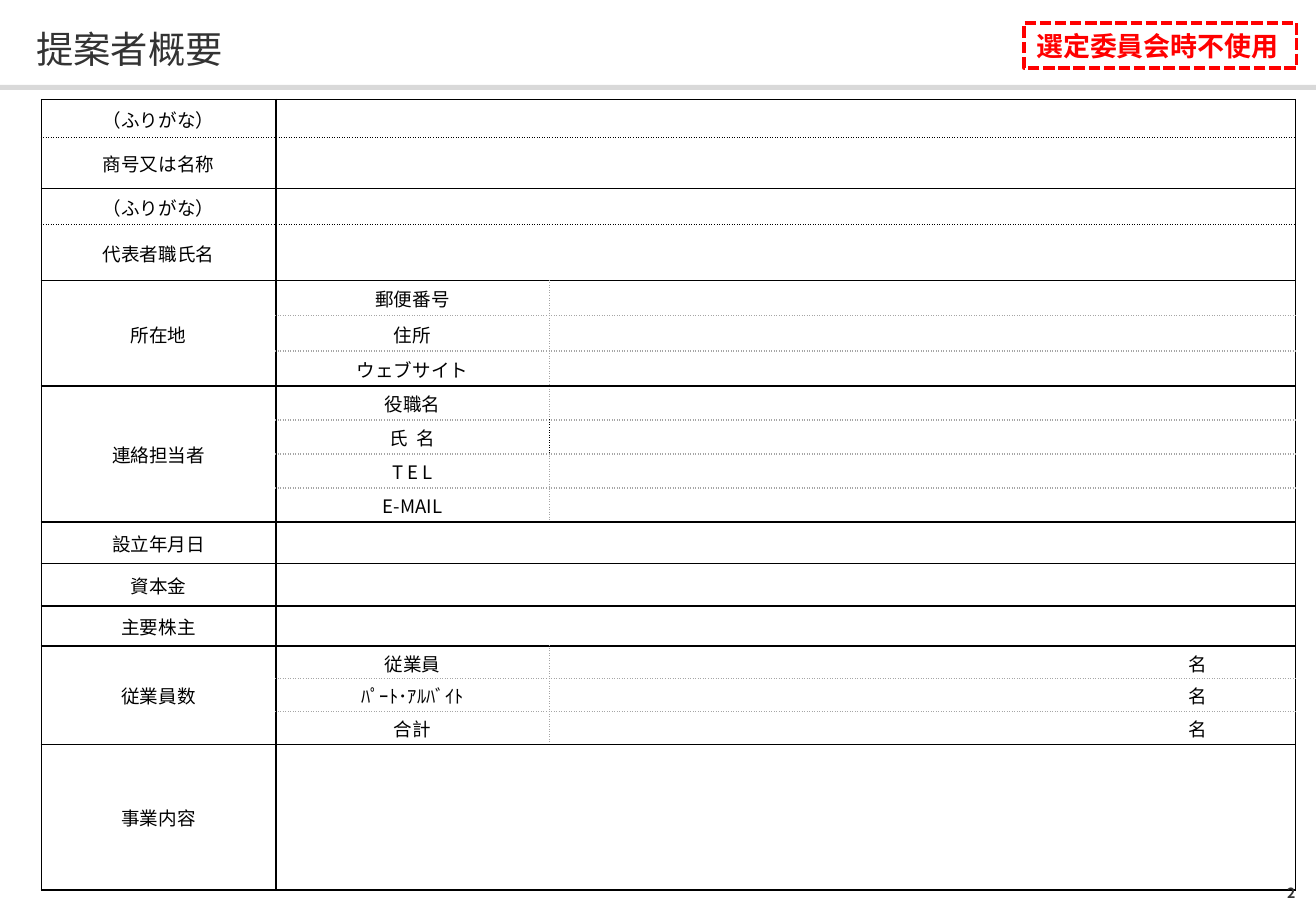
from lxml.etree import SubElement as Sub
from pptx import Presentation
from pptx.dml.color import RGBColor as RGB
from pptx.enum.dml import MSO_LINE as Dash
from pptx.enum.shapes import MSO_SHAPE as Shape
from pptx.enum.text import MSO_ANCHOR as Anchor, MSO_AUTO_SIZE as Fit, PP_ALIGN as Align
from pptx.oxml.ns import qn
from pptx.util import Inches, Pt

theme = {
    "font": "Noto Sans CJK JP",
    "ink": "000000", "text": "333333", "bar": "D9D9D9", "alert": "FF0000",
    "title": 22.1, "cell": 11, "badge": 16, "page": 8.3,
    "solid": ("000000", 1, "solid"),
    "thin": ("000000", 0.5, "dot"),
    "grey": ("A6A6A6", 1, "sysDot"),
}


def write(frame, text, size, color, align=Align.LEFT, bold=False, inset=(0, 0, 0, 0)):
    frame.word_wrap = True
    frame.auto_size = Fit.NONE
    frame.vertical_anchor = Anchor.MIDDLE
    sides = ("margin_left", "margin_top", "margin_right", "margin_bottom")
    for side, gap in zip(sides, inset):
        setattr(frame, side, Inches(gap))
    para = frame.paragraphs[0]
    para.alignment = align
    run = para.add_run()
    run.text = text
    look = {"size": Pt(theme[size]), "bold": bold, "name": theme["font"]}
    for key, value in look.items():
        setattr(run.font, key, value)
    run.font.color.rgb = RGB.from_string(theme[color])
    Sub(run.font._element, qn("a:ea"), typeface=theme["font"])
    return para


def border(cell, tag, kind):
    line = Sub(cell._tc.get_or_add_tcPr(), qn("a:" + tag))
    if kind is None:
        line.set("w", "0")
        Sub(line, qn("a:noFill"))
        return
    color, width, dash = theme[kind]
    line.set("w", str(Pt(width)))
    fill = Sub(line, qn("a:solidFill"))
    Sub(fill, qn("a:srgbClr"), val=color)
    Sub(line, qn("a:prstDash"), val=dash)


prs = Presentation()
prs.slide_width, prs.slide_height = Inches(10.83), Inches(7.5)
slide = prs.slides.add_slide(prs.slide_layouts[5])
shapes = slide.shapes

title = shapes.title
title.left, title.top = Inches(0.3), Inches(0.17)
title.width, title.height = Inches(10.24), Inches(0.43)
write(title.text_frame, "提案者概要", "title", "text").line_spacing = 1.1

bar = shapes.add_shape(Shape.RECTANGLE, 0, Inches(0.7), prs.slide_width, Inches(0.04))
bar.shadow.inherit = False
bar.fill.solid()
bar.fill.fore_color.rgb = RGB.from_string(theme["bar"])
bar.line.fill.background()

groups = [
    ("（ふりがな）", [0.31], []),
    ("商号又は名称", [0.42], []),
    ("（ふりがな）", [0.3], []),
    ("代表者職氏名", [0.46], []),
    ("所在地", [0.29] * 3, ["郵便番号", "住所", "ウェブサイト"]),
    ("連絡担当者", [0.28] * 4, ["役職名", "氏  名", "T E L", "E-MAIL"]),
    ("設立年月日", [0.34], []),
    ("資本金", [0.35], []),
    ("主要株主", [0.33], []),
    ("従業員数", [0.27] * 3, ["従業員", "ﾊﾟｰﾄ･ｱﾙﾊﾞｲﾄ", "合計"]),
    ("事業内容", [1.2], []),
]
widths = [1.93, 2.25, 4.54, 1.6]
heights = [high for group in groups for high in group[1]]
rows, cols = len(heights), len(widths)

frame = shapes.add_table(rows, cols, Inches(0.34), Inches(0.82),
                         Inches(sum(widths)), Inches(sum(heights)))
table = frame.table
table.first_row = table.horz_banding = False
for col, wide in zip(table.columns, widths):
    col.width = Inches(wide)
for row, high in zip(table.rows, heights):
    row.height = Inches(high)

across = {(r, c): "solid" for r in range(rows + 1) for c in range(cols)}
down = {(r, c): "solid" for r in range(rows) for c in range(cols + 1)}
texts = {}
top = 0
for label, highs, parts in groups:
    end = top + len(highs)
    texts[top, 0] = label
    if not parts:
        table.cell(top, 1).merge(table.cell(top, 3))
        down[top, 2] = down[top, 3] = None
        if label == "（ふりがな）":
            for c in range(cols):
                across[end, c] = "thin"
    else:
        table.cell(top, 0).merge(table.cell(end - 1, 0))
        for r, part in enumerate(parts, top):
            texts[r, 1] = part
            down[r, 2] = "thin" if part == "氏  名" else "grey"
            down[r, 3] = None
            if label == "従業員数":
                texts[r, 3] = "名"
            else:
                table.cell(r, 2).merge(table.cell(r, 3))
            if r > top:
                across[r, 0] = None
                for c in range(1, cols):
                    across[r, c] = "grey"
    top = end

for r in range(rows):
    for c in range(cols):
        cell = table.cell(r, c)
        tall = cell.span_height if cell.is_merge_origin else 1
        wide = cell.span_width if cell.is_merge_origin else 1
        border(cell, "lnL", down[r, c])
        border(cell, "lnR", down[r, c + wide])
        border(cell, "lnT", across[r, c])
        border(cell, "lnB", across[r + tall, c])
        cell.fill.background()
        cell.vertical_anchor = Anchor.MIDDLE
        cell.margin_left = cell.margin_top = cell.margin_right = Inches(0.01)
        cell.margin_bottom = 0
        if (r, c) in texts:
            write(cell.text_frame, texts[r, c], "cell", "ink", Align.CENTER)
            cell.text_frame._txBody.bodyPr.attrib.clear()
        else:
            para = cell.text_frame.paragraphs[0]
            Sub(para._p, qn("a:endParaRPr"), sz=str(theme["cell"] * 100))

badge = shapes.add_shape(Shape.RECTANGLE, Inches(8.43), Inches(0.19), Inches(2.24), Inches(0.37))
badge.shadow.inherit = False
badge.fill.background()
badge.line.color.rgb = RGB.from_string(theme["alert"])
badge.line.width = Pt(2.25)
badge.line.dash_style = Dash.SQUARE_DOT
badge.line._ln.find(qn("a:prstDash")).set("val", "sysDash")
write(badge.text_frame, "選定委員会時不使用", "badge", "alert", bold=True,
      inset=(0.1, 0.05, 0.1, 0.05))

page = shapes.add_textbox(Inches(10.14), Inches(7.21), Inches(0.52), Inches(0.28))
write(page.text_frame, "2", "page", "text", Align.RIGHT, True)

prs.save("out.pptx")
